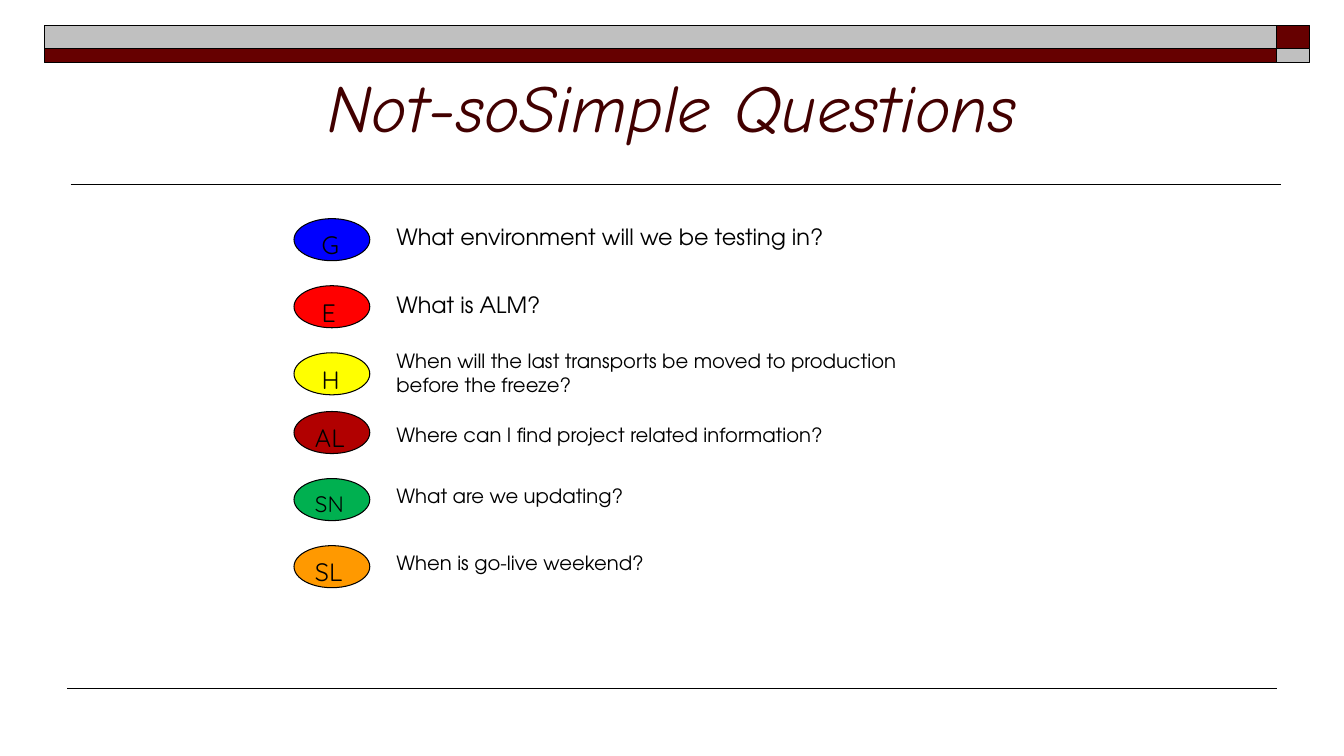
from lxml.etree import SubElement
from pptx import Presentation
from pptx.dml.color import RGBColor
from pptx.enum.shapes import MSO_CONNECTOR, MSO_SHAPE
from pptx.enum.text import MSO_ANCHOR, MSO_AUTO_SIZE, PP_ALIGN
from pptx.oxml.ns import qn
from pptx.util import Cm, Pt

BLACK = RGBColor(0x00, 0x00, 0x00)
MAROON = RGBColor(0x66, 0x00, 0x00)
DARK_MAROON = RGBColor(0x42, 0x00, 0x00)
SILVER = RGBColor(0xC0, 0xC0, 0xC0)
BLUE = RGBColor(0x00, 0x00, 0xFF)
RED = RGBColor(0xFF, 0x00, 0x00)
YELLOW = RGBColor(0xFF, 0xFF, 0x00)
BRICK = RGBColor(0xB1, 0x00, 0x00)
GREEN = RGBColor(0x00, 0xB0, 0x50)
ORANGE = RGBColor(0xFF, 0x99, 0x00)

TITLE = "Not-soSimple Questions"
QUESTIONS = [
    {"badge": "G", "fill": BLUE, "badge_size": 18, "size": 16, "shift": 0, "width": 15.67,
     "height": 0.94, "text": "What environment will we be testing in?"},
    {"badge": "E", "fill": RED, "badge_size": 18, "size": 16, "shift": 0, "width": 12.27,
     "height": 0.94, "text": "What is ALM?"},
    {"badge": "H", "fill": YELLOW, "badge_size": 18, "size": 14, "shift": -0.21, "width": 13.13,
     "height": 1.45,
     "text": "When will the last transports be moved to production before the freeze?"},
    {"badge": "AL", "fill": BRICK, "badge_size": 18, "size": 14, "shift": 0.17, "width": 17.98,
     "height": 0.86, "text": "Where can I find project related information?"},
    {"badge": "SN", "fill": GREEN, "badge_size": 16, "size": 14, "shift": 0, "width": 16.51,
     "height": 0.86, "text": "What are we updating?"},
    {"badge": "SL", "fill": ORANGE, "badge_size": 18, "size": 14, "shift": 0, "width": 18.21,
     "height": 0.86, "text": "When is go-live weekend?"},
]
BAR_COLUMNS = [(1.12, 31.05), (32.17, 0.84)]
BAR_ROWS = [(0.64, 0.58), (1.22, 0.36)]
RULES = [(1.78, 32.28, 4.65, 1), (1.7, 32.18, 17.35, 0.75)]
FIRST_TOP, ROW_PITCH, GROUP_SIZE, GROUP_LIFT = 5.51, 1.69, 3, 0.21
BADGE_LEFT, BADGE_WIDTH, BADGE_HEIGHT = 7.41, 1.91, 1.06
LETTER_INDENT = 0.17
QUESTION_LEFT = 9.74


def apply_format(target, values):
    for name, value in values.items():
        setattr(target, name, value)


def add_figure(page, kind, place, fill, line_width):
    figure = page.shapes.add_shape(kind, *map(Cm, place))
    figure.shadow.inherit = False
    figure.fill.solid()
    figure.fill.fore_color.rgb = fill
    figure.line.color.rgb = BLACK
    figure.line.width = Pt(line_width)
    return figure


def add_rule(page, left, right, top, width):
    rule = page.shapes.add_connector(
        MSO_CONNECTOR.STRAIGHT, Cm(left), Cm(top), Cm(right), Cm(top))
    rule.line.color.rgb = BLACK
    rule.line.width = Pt(width)
    SubElement(rule._element.spPr, qn("a:effectLst"))


def write_text(box, text, font, color=BLACK, align=PP_ALIGN.LEFT, anchor=MSO_ANCHOR.TOP):
    apply_format(box.text_frame, {"word_wrap": True, "vertical_anchor": anchor})
    para = box.text_frame.paragraphs[0]
    para.alignment = align
    span = para.add_run()
    span.text = text
    apply_format(span.font, font)
    span.font.color.rgb = color
    return para


def add_question(page, index, entry):
    top = FIRST_TOP + index * ROW_PITCH - index // GROUP_SIZE * GROUP_LIFT
    badge = add_figure(page, MSO_SHAPE.OVAL,
                       (BADGE_LEFT, top, BADGE_WIDTH, BADGE_HEIGHT), entry["fill"], 0.75)
    para = write_text(badge, entry["badge"],
                      {"name": "Quicksand", "size": Pt(entry["badge_size"])})
    if len(entry["badge"]) == 1:
        para._p.get_or_add_pPr().set("marL", str(Cm(LETTER_INDENT)))
    place = (QUESTION_LEFT, top + entry["shift"], entry["width"], entry["height"])
    box = page.shapes.add_textbox(*map(Cm, place))
    write_text(box, entry["text"], {"name": "TeX Gyre Adventor", "size": Pt(entry["size"])})
    box.text_frame.auto_size = MSO_AUTO_SIZE.SHAPE_TO_FIT_TEXT


def main():
    deck = Presentation()
    apply_format(deck, {"slide_width": Cm(33.87), "slide_height": Cm(19.05)})
    page = deck.slides.add_slide(deck.slide_layouts[6])
    for row, (top, height) in enumerate(BAR_ROWS):
        for column, (left, width) in enumerate(BAR_COLUMNS):
            fill = SILVER if row == column else MAROON
            add_figure(page, MSO_SHAPE.RECTANGLE, (left, top, width, height), fill, 1)
    for rule in RULES:
        add_rule(page, *rule)
    title = page.shapes.add_textbox(Cm(5.5), Cm(0.64), Cm(22.86), Cm(3.17))
    write_text(title, TITLE, {"name": "Comic Neue", "size": Pt(48), "italic": True},
               DARK_MAROON, PP_ALIGN.CENTER, MSO_ANCHOR.BOTTOM)
    for index, entry in enumerate(QUESTIONS):
        add_question(page, index, entry)
    deck.save("out.pptx")


if __name__ == "__main__":
    main()
